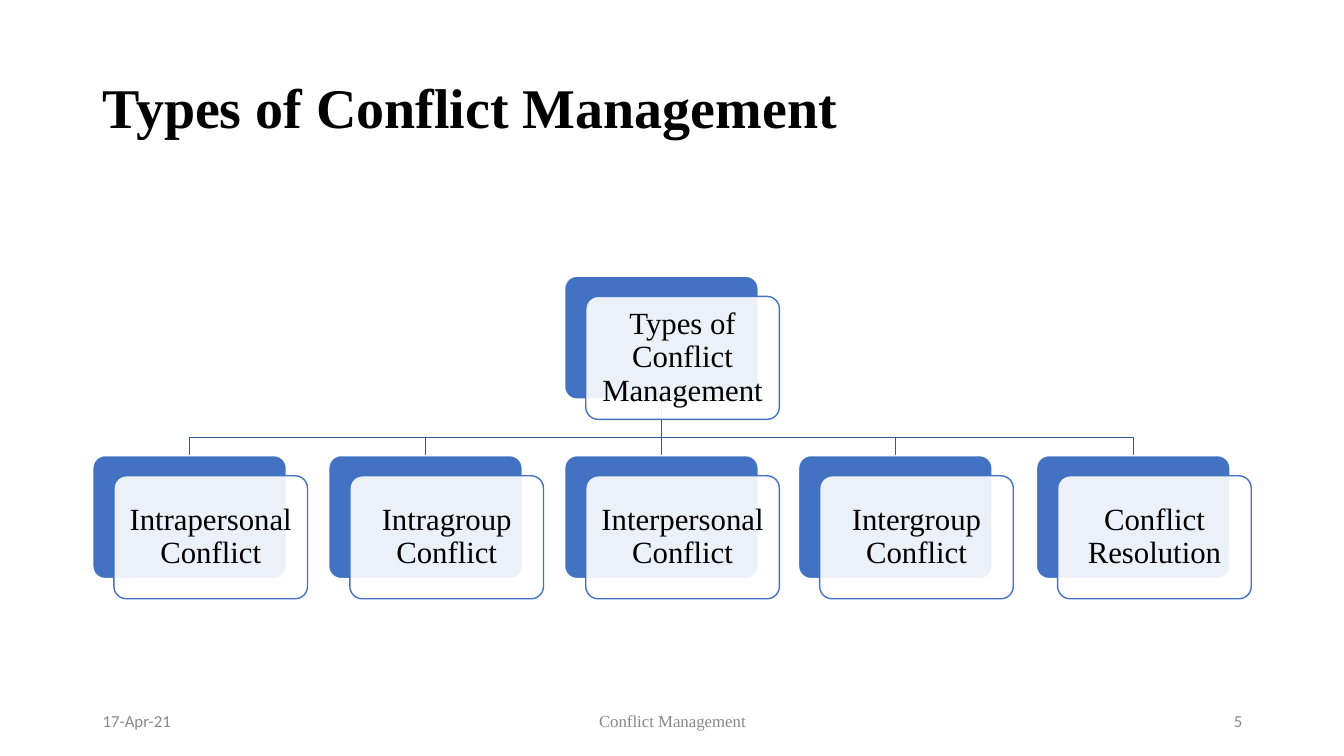
from pptx import Presentation
from pptx.dml.color import RGBColor
from pptx.enum.shapes import MSO_CONNECTOR, MSO_SHAPE
from pptx.enum.text import MSO_ANCHOR, PP_ALIGN
from pptx.oxml.ns import qn
from pptx.util import Inches, Pt
from lxml import etree

COLORS = {"black": "000000", "white": "FFFFFF", "blue": "4372C3",
          "branch": "345A99", "gray": "888888"}
SERIF = "Times New Roman"
SANS = "Calibri"
CARD_WIDTH, CARD_HEIGHT = 1.92, 1.22
OFFSET_X, OFFSET_Y = 0.21, 0.2
ROOT_LEFT, ROOT_TOP = 5.6, 2.74
CHILD_TOP = 4.52
BRANCH_Y = 4.34
CHILDREN = [
    (0.92, "Intrapersonal Conflict"),
    (3.26, "Intragroup Conflict"),
    (5.6, "Interpersonal Conflict"),
    (7.92, "Intergroup Conflict"),
    (10.28, "Conflict Resolution"),
]
FOOTERS = [
    (0.92, 3, "17-Apr-21", SANS, PP_ALIGN.LEFT),
    (4.42, 4.5, "Conflict Management", SERIF, PP_ALIGN.CENTER),
    (9.42, 3, "5", SANS, PP_ALIGN.RIGHT),
]


def color(name):
    return RGBColor.from_string(COLORS[name])


def write(box, text, size, font, color_name, align, bold=False, spacing=None):
    frame = box.text_frame
    frame.word_wrap = True
    frame.vertical_anchor = MSO_ANCHOR.MIDDLE
    frame.text = text
    para = frame.paragraphs[0]
    para.alignment = align
    para.line_spacing = spacing
    span = para.runs[0]
    span.font.size = Pt(size)
    span.font.name = font
    span.font.bold = bold
    span.font.color.rgb = color(color_name)


def add_title(page, text):
    title = page.shapes.title
    title.left, title.top = Inches(0.92), Inches(0.37)
    title.width, title.height = Inches(11.5), Inches(1.45)
    write(title, text, 40, SERIF, "black", PP_ALIGN.LEFT, True, 0.9)


def add_footer(page, left, width, text, font, align):
    box = page.shapes.add_textbox(Inches(left), Inches(6.95), Inches(width), Inches(0.4))
    write(box, text, 12, font, "gray", align)


def add_branch(page, start_x, start_y, end_x):
    builder = page.shapes.build_freeform(Inches(start_x), Inches(start_y))
    corners = [(start_x, BRANCH_Y), (end_x, BRANCH_Y), (end_x, CHILD_TOP)]
    builder.add_line_segments([(Inches(x), Inches(y)) for x, y in corners], close=False)
    branch = builder.convert_to_shape()
    branch.shadow.inherit = False
    branch.fill.background()
    branch.line.color.rgb = color("branch")
    branch.line.width = Pt(1)


def add_stem(page, x, top, bottom):
    stem = page.shapes.add_connector(
        MSO_CONNECTOR.STRAIGHT, Inches(x), Inches(top), Inches(x), Inches(bottom))
    etree.SubElement(stem._element.spPr, qn("a:effectLst"))
    stem.line.color.rgb = color("branch")
    stem.line.width = Pt(1)
    return stem


def add_panel(page, left, top, fill, line):
    panel = page.shapes.add_shape(
        MSO_SHAPE.ROUNDED_RECTANGLE, Inches(left), Inches(top),
        Inches(CARD_WIDTH), Inches(CARD_HEIGHT))
    panel.adjustments[0] = 0.1
    panel.shadow.inherit = False
    panel.fill.solid()
    panel.fill.fore_color.rgb = color(fill)
    panel.line.color.rgb = color(line)
    panel.line.width = Pt(1)
    return panel


def add_card(page, left, top, text):
    back = add_panel(page, left, top, "blue", "white")
    front = add_panel(page, left + OFFSET_X, top + OFFSET_Y, "white", "blue")
    fill_color = front._element.spPr.find(qn("a:solidFill"))[0]
    etree.SubElement(fill_color, qn("a:alpha"), val="90000")
    frame = front.text_frame
    frame.margin_left = frame.margin_right = Inches(0.09)
    frame.margin_top = frame.margin_bottom = Inches(0.09)
    write(front, text, 22, SERIF, "black", PP_ALIGN.CENTER, spacing=0.9)
    return back


def add_hierarchy(page):
    root_x = ROOT_LEFT + CARD_WIDTH / 2
    root_bottom = ROOT_TOP + CARD_HEIGHT
    for left, text in reversed(CHILDREN):
        if left == ROOT_LEFT:
            stem = add_stem(page, root_x, root_bottom, CHILD_TOP)
        else:
            add_branch(page, root_x, root_bottom, left + CARD_WIDTH / 2)
    root = add_card(page, ROOT_LEFT, ROOT_TOP, "Types of Conflict Management")
    stem.begin_connect(root, 2)
    for left, text in CHILDREN:
        child = add_card(page, left, CHILD_TOP, text)
        if left == ROOT_LEFT:
            stem.end_connect(child, 0)


def main():
    deck = Presentation()
    deck.slide_width, deck.slide_height = Inches(13.33), Inches(7.5)
    page = deck.slides.add_slide(deck.slide_layouts[5])
    add_title(page, "Types of Conflict Management")
    add_hierarchy(page)
    for footer in FOOTERS:
        add_footer(page, *footer)
    deck.save("out.pptx")


if __name__ == "__main__":
    main()
